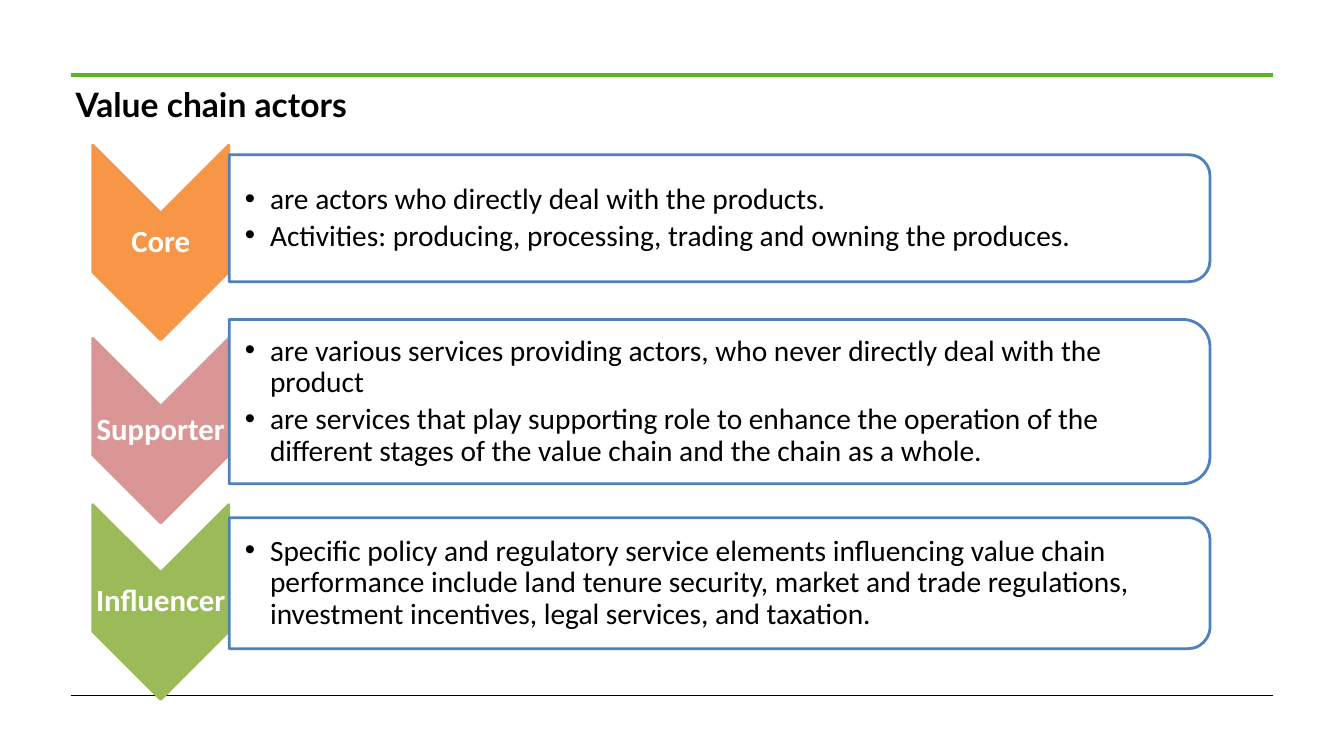
from lxml import etree
from pptx import Presentation
from pptx.dml.color import RGBColor
from pptx.enum.shapes import MSO_CONNECTOR, MSO_SHAPE
from pptx.enum.text import MSO_ANCHOR, PP_ALIGN
from pptx.oxml.ns import qn
from pptx.util import Pt

STRAIGHT = MSO_CONNECTOR.STRAIGHT
CHEVRON = MSO_SHAPE.CHEVRON
PANEL = MSO_SHAPE.ROUND_2_SAME_RECTANGLE
TOP, MIDDLE = MSO_ANCHOR.TOP, MSO_ANCHOR.MIDDLE
LEFT, CENTER = PP_ALIGN.LEFT, PP_ALIGN.CENTER

COLORS = {
    "black": "000000", "white": "FFFFFF", "rule": "58B41F", "border": "4F81BD",
    "core": "F79646", "supporter": "D99694", "influencer": "9BBB59",
}

# label, colour, chevron centre y, chevron length, panel centre y, panel height, bullets
ACTORS = [
    ("Core", "core", 173.2, 139, 155.9, 90.7, [
        "are actors who directly deal with the products.",
        "Activities: producing, processing, trading and owning the produces."]),
    ("Supporter", "supporter", 307.6, 131.8, 286.9, 117.4, [
        "are various services providing actors, who never directly deal with the product",
        "are services that play supporting role to enhance the operation of the "
        "different stages of the value chain and the chain as a whole."]),
    ("Influencer", "influencer", 430, 139, 416.6, 93.6, [
        "Specific policy and regulatory service elements influencing value chain "
        "performance include land tenure security, market and trade regulations, "
        "investment incentives, legal services, and taxation."]),
]
CHEVRON_X, CHEVRON_WIDTH = 114.8, 97.2
PANEL_X, PANEL_WIDTH = 514, 700.6
TEXT_LEFT, TEXT_WIDTH = 163.4, 696


class ActorSlide:
    body_font, title_font = "Calibri", "Lato"

    def __init__(self, prs):
        self.shapes = prs.slides.add_slide(prs.slide_layouts[6]).shapes

    def color(self, name):
        return RGBColor.from_string(COLORS[name])

    def rule(self, y, color, weight):
        line = self.shapes.add_connector(STRAIGHT, Pt(50.4), Pt(y), Pt(909.4), Pt(y))
        line.line.color.rgb = self.color(color)
        line.line.width = Pt(weight)
        etree.SubElement(line._element.spPr, qn("a:effectLst"))

    def turned_shape(self, kind, center_x, center_y, width, height, fill, border):
        """Place a shape turned by 90 degrees; width and height are as seen."""
        s = self.shapes.add_shape(kind, Pt(center_x - height / 2), Pt(center_y - width / 2),
                                  Pt(height), Pt(width))
        s.rotation = 90
        s.shadow.inherit = False
        s.fill.solid()
        s.fill.fore_color.rgb = self.color(fill)
        s.line.color.rgb = self.color(border)
        s.line.width = Pt(2)
        return s

    def panel(self, center_y, height):
        s = self.turned_shape(PANEL, PANEL_X, center_y, PANEL_WIDTH, height, "white", "border")
        fill = s._element.spPr.find(qn("a:solidFill"))
        etree.SubElement(fill[0], qn("a:alpha"), val="90000")

    def text(self, x, y, w, h, paragraphs, size, color="black", font=body_font, bold=False,
             align=LEFT, anchor=MIDDLE, insets=(0, 0), wrap=True, spacing=0.9, bullets=False):
        tf = self.shapes.add_textbox(Pt(x), Pt(y), Pt(w), Pt(h)).text_frame
        tf.word_wrap = wrap
        tf.vertical_anchor = anchor
        tf.margin_left = Pt(insets[0])
        tf.margin_right = tf.margin_top = tf.margin_bottom = Pt(insets[1])
        for i, words in enumerate(paragraphs):
            p = tf.paragraphs[0] if i == 0 else tf.add_paragraph()
            p.alignment = align
            p.line_spacing = spacing
            if bullets:
                self.bullet(p)
            r = p.add_run()
            r.text = words
            r.font.name = font
            r.font.size = Pt(size)
            r.font.bold = bold
            r.font.color.rgb = self.color(color)

    def bullet(self, p):
        p.space_after = Pt(3.5)
        pPr = p._p.get_or_add_pPr()
        pPr.set("marL", str(Pt(18)))
        pPr.set("indent", str(-Pt(18)))
        etree.SubElement(pPr, qn("a:buFont"), typeface="Arial")
        etree.SubElement(pPr, qn("a:buChar"), char="•")

    def actor(self, label, color, chevron_y, chevron_length, panel_y, panel_height, bullets):
        self.turned_shape(CHEVRON, CHEVRON_X, chevron_y, CHEVRON_WIDTH, chevron_length,
                          color, color)
        self.text(CHEVRON_X - CHEVRON_WIDTH / 2, chevron_y - 20, CHEVRON_WIDTH, 40, [label], 22,
                  color="white", bold=True, align=CENTER, insets=(1.4, 1.4), wrap=False)
        self.panel(panel_y, panel_height)
        text_height = panel_height - 10
        self.text(TEXT_LEFT, panel_y - text_height / 2, TEXT_WIDTH, text_height, bullets, 21,
                  insets=(11.5, 0.7), bullets=True)


def main():
    prs = Presentation()
    prs.slide_width, prs.slide_height = Pt(960), Pt(540)
    s = ActorSlide(prs)
    s.rule(53.5, "rule", 3)
    s.rule(496.8, "black", 0.48)
    s.text(54, 60, 752.4, 28.8, ["Value chain actors"], 24, font=s.title_font, bold=True,
           anchor=TOP, spacing=1.0)
    for actor in ACTORS:
        s.actor(*actor)
    prs.save("out.pptx")


if __name__ == "__main__":
    main()
